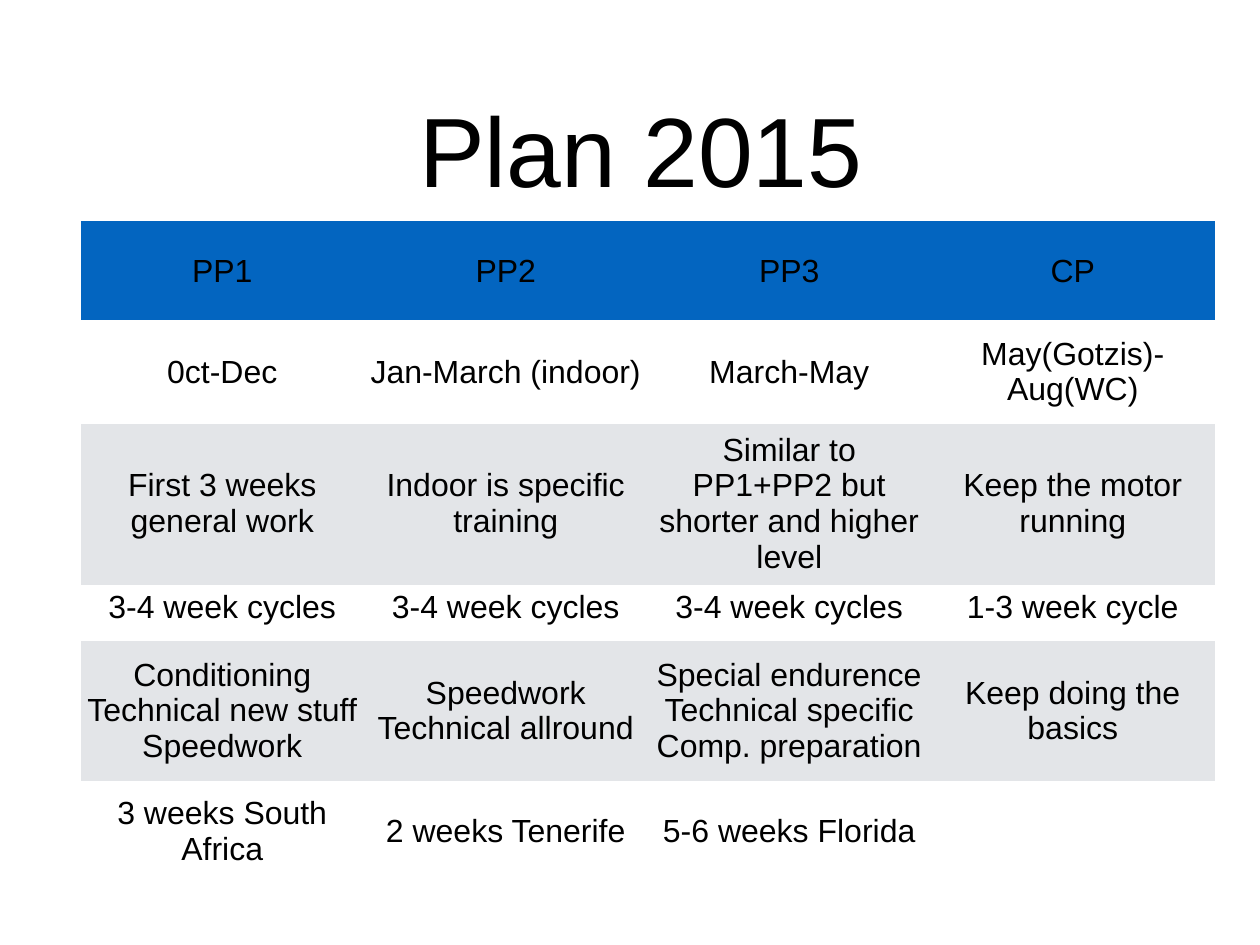
from lxml.etree import SubElement
from pptx import Presentation
from pptx.dml.color import RGBColor
from pptx.enum.text import MSO_ANCHOR as Anchor, PP_ALIGN as Align
from pptx.oxml.ns import qn
from pptx.util import Pt

BLACK, WHITE, BLUE, GREY = "000000", "FFFFFF", "0365C0", "E3E5E8"
NO_STYLE = "{2D5ABB26-0587-4C30-8999-92F81FD0307C}"
COLUMN_WIDTH = 230.4

PLAN = [
    (82, BLUE, Anchor.MIDDLE, ["PP1", "PP2", "PP3", "CP"]),
    (82, WHITE, Anchor.MIDDLE,
     ["0ct-Dec", "Jan-March (indoor)", "March-May", "May(Gotzis)- Aug(WC)"]),
    (105, GREY, Anchor.MIDDLE,
     ["First 3 weeks general work", "Indoor is specific training",
      "Similar to PP1+PP2 but shorter and higher level", "Keep the motor running"]),
    (45.5, WHITE, Anchor.TOP, ["3-4 week cycles"] * 3 + ["1-3 week cycle"]),
    (114, GREY, Anchor.MIDDLE,
     ["Conditioning\nTechnical new stuff\nSpeedwork", "Speedwork\nTechnical allround",
      "Special endurence\nTechnical specific\nComp. preparation", "Keep doing the basics"]),
    (82, WHITE, Anchor.MIDDLE,
     ["3 weeks South Africa", "2 weeks Tenerife", "5-6 weeks Florida", ""]),
]


def color(hex_string):
    return RGBColor.from_string(hex_string)


def set_attributes(target, values):
    for name, value in values.items():
        setattr(target, name, value)


def margins(points):
    return {f"margin_{side}": Pt(points) for side in ("left", "top", "right", "bottom")}


def write_text(text_frame, text, size):
    text_frame.text = text
    for paragraph in text_frame.paragraphs:
        paragraph.alignment = Align.CENTER
        set_attributes(paragraph.font, {"name": "Arial", "size": Pt(size)})
        paragraph.font.color.rgb = color(BLACK)


def add_title(slide, text):
    shape = slide.shapes.add_textbox(Pt(75), Pt(35.5), Pt(874), Pt(170))
    text_frame = shape.text_frame
    set_attributes(text_frame, {
        "word_wrap": True, "vertical_anchor": Anchor.MIDDLE, **margins(4)})
    write_text(text_frame, text, 80)
    text_frame.paragraphs[0]._p.get_or_add_pPr().set("marL", str(Pt(18)))


def add_border(cell, side, hex_string, width):
    line = SubElement(cell._tc.get_or_add_tcPr(), qn(f"a:ln{side}"), w=str(Pt(width)))
    fill = SubElement(line, qn("a:solidFill"))
    SubElement(fill, qn("a:srgbClr"), val=hex_string)


def fill_cell(cell, text, fill, anchor):
    set_attributes(cell, {"vertical_anchor": anchor, **margins(3.6)})
    write_text(cell.text_frame, text, 26)
    cell.fill.solid()
    cell.fill.fore_color.rgb = color(fill)


def add_plan_table(slide, plan):
    columns = len(plan[0][3])
    height = sum(row[0] for row in plan)
    table = slide.shapes.add_table(
        len(plan), columns, Pt(65.5), Pt(179.3),
        Pt(COLUMN_WIDTH * columns), Pt(height)).table
    set_attributes(table, {"first_row": False, "horz_banding": False})
    table._tbl.tblPr.find(qn("a:tableStyleId")).text = NO_STYLE
    for column in table.columns:
        column.width = Pt(COLUMN_WIDTH)
    for side, row in (("B", 0), ("T", 1)):
        for cell in table.rows[row].cells:
            add_border(cell, side, WHITE, 3)
    for row, (row_height, fill, anchor, texts) in zip(table.rows, plan):
        row.height = Pt(row_height)
        for cell, text in zip(row.cells, texts):
            fill_cell(cell, text, fill, anchor)


def main():
    presentation = Presentation()
    set_attributes(presentation, {"slide_width": Pt(1024), "slide_height": Pt(768)})
    slide = presentation.slides.add_slide(presentation.slide_layouts[6])
    add_title(slide, "Plan 2015")
    add_plan_table(slide, PLAN)
    presentation.save("out.pptx")


if __name__ == "__main__":
    main()
